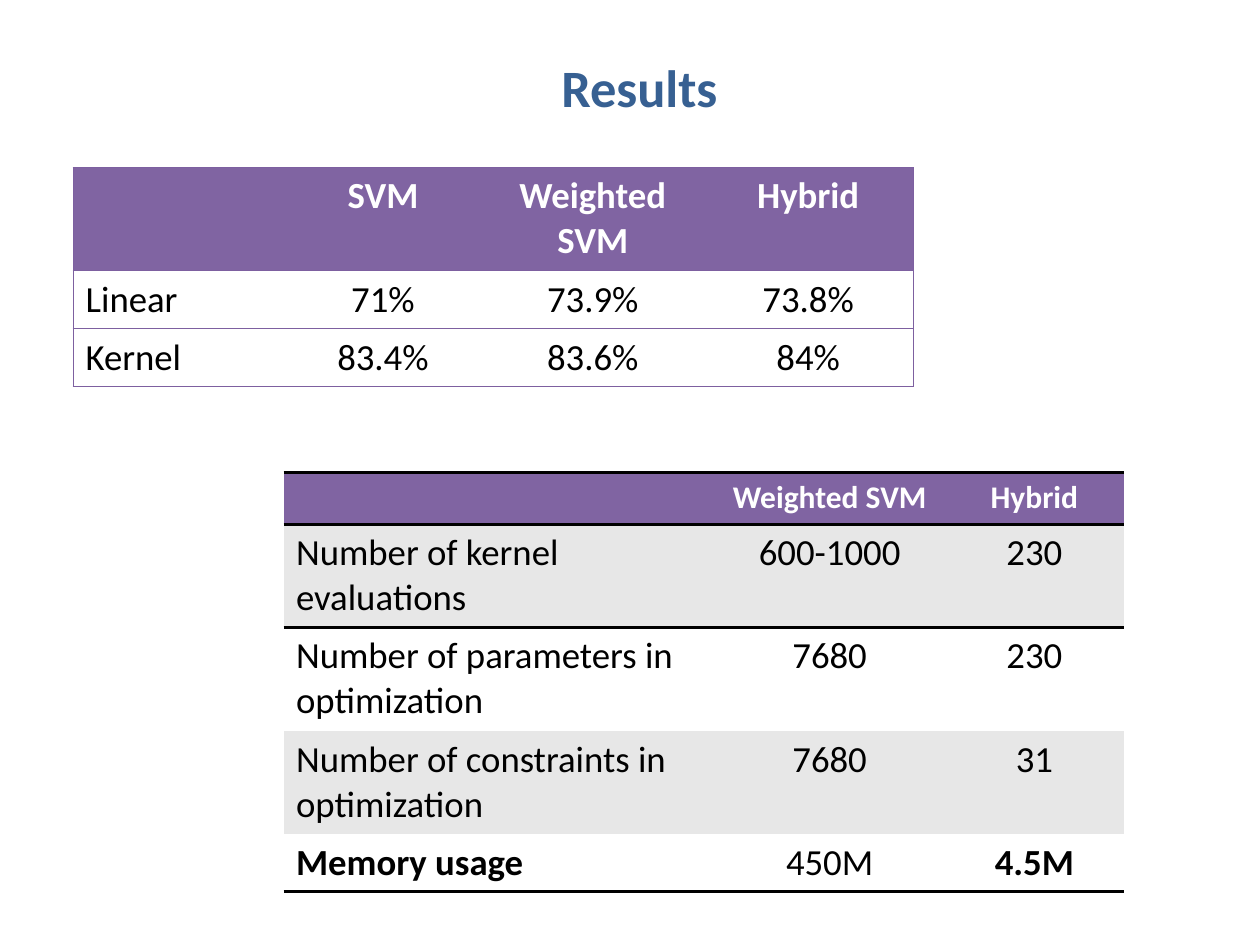
"""Build the Results slide with an accuracy table and a cost table."""
from lxml import etree
from pptx import Presentation
from pptx.dml.color import RGBColor
from pptx.enum.text import MSO_ANCHOR, PP_ALIGN
from pptx.oxml.ns import qn
from pptx.util import Inches, Pt

CENTER, LEFT, MIDDLE = PP_ALIGN.CENTER, PP_ALIGN.LEFT, MSO_ANCHOR.MIDDLE
PLAIN_STYLE = "{2D5ABB26-0587-4C30-8999-92F81FD0307C}"
FONT = "Calibri"
PURPLE, EDGE, GRAY = "8064A2", "7D60A0", "E7E7E7"
WHITE, BLACK, BLUE = "FFFFFF", "000000", "376092"


def style_font(font, size, color, bold):
    font.name, font.size, font.bold = FONT, Pt(size), bold
    font.color.rgb = RGBColor.from_string(color)


def add_border(cell, side, color, width):
    line = etree.SubElement(cell._tc.get_or_add_tcPr(), qn(f"a:ln{side}"), w=str(Pt(width)))
    fill = etree.SubElement(line, qn("a:solidFill"))
    etree.SubElement(fill, qn("a:srgbClr"), val=color)


tables = [
    {
        "place": (0.58, 1.33),
        "columns": [1.67, 1.58, 1.75, 1.67],
        "heights": [0.82, 0.46, 0.46],
        "header_size": 21,
        "band": WHITE,
        "border": (EDGE, 0.75),
        "boxed": True,
        "ruled_rows": {0, 1, 2},
        "bold": set(),
        "rows": [
            ["", "SVM", "Weighted SVM", "Hybrid"],
            ["Linear", "71%", "73.9%", "73.8%"],
            ["Kernel", "83.4%", "83.6%", "84%"],
        ],
    },
    {
        "place": (2.25, 3.75),
        "columns": [3.42, 1.83, 1.42],
        "heights": [0.41, 0.82, 0.82, 0.82, 0.46],
        "header_size": 18,
        "band": GRAY,
        "border": (BLACK, 2),
        "boxed": False,
        "ruled_rows": {0, 4},
        "bold": {"Memory usage", "4.5M"},
        "rows": [
            ["", "Weighted SVM", "Hybrid"],
            ["Number of kernel evaluations", "600-1000", "230"],
            ["Number of parameters in optimization", "7680", "230"],
            ["Number of constraints in optimization", "7680", "31"],
            ["Memory usage", "450M", "4.5M"],
        ],
    },
]

deck = Presentation()
deck.slide_width, deck.slide_height = Inches(10), Inches(7.5)
page = deck.slides.add_slide(deck.slide_layouts[6])

title = page.shapes.add_textbox(Inches(2.17), Inches(0.25), Inches(5.81), Inches(0.88))
title.text_frame.word_wrap = True
title.text_frame.vertical_anchor = MIDDLE
para = title.text_frame.paragraphs[0]
para.text, para.alignment = "Results", CENTER
style_font(para.font, 30, BLUE, True)

for data in tables:
    rows, columns, heights = data["rows"], data["columns"], data["heights"]
    left, top = data["place"]
    table = page.shapes.add_table(
        len(rows), len(columns), Inches(left), Inches(top),
        Inches(sum(columns)), Inches(sum(heights)),
    ).table
    table._tbl.tblPr.find(qn("a:tableStyleId")).text = PLAIN_STYLE
    for column, width in zip(table.columns, columns):
        column.width = Inches(width)
    for r, (values, height) in enumerate(zip(rows, heights)):
        table.rows[r].height = Inches(height)
        header = r == 0
        for c, value in enumerate(values):
            cell = table.cell(r, c)
            sides = {
                "L": data["boxed"] and c == 0,
                "R": data["boxed"] and c == len(columns) - 1,
                "T": header or r - 1 in data["ruled_rows"],
                "B": r in data["ruled_rows"],
            }
            for side, shown in sides.items():
                if shown:
                    add_border(cell, side, *data["border"])
            cell.fill.solid()
            color = PURPLE if header else data["band"] if r % 2 else WHITE
            cell.fill.fore_color.rgb = RGBColor.from_string(color)
            para = cell.text_frame.paragraphs[0]
            para.text = value
            para.alignment = CENTER if c else LEFT
            style_font(
                para.font,
                data["header_size"] if header else 21,
                WHITE if header else BLACK,
                header or value in data["bold"],
            )

deck.save("out.pptx")
